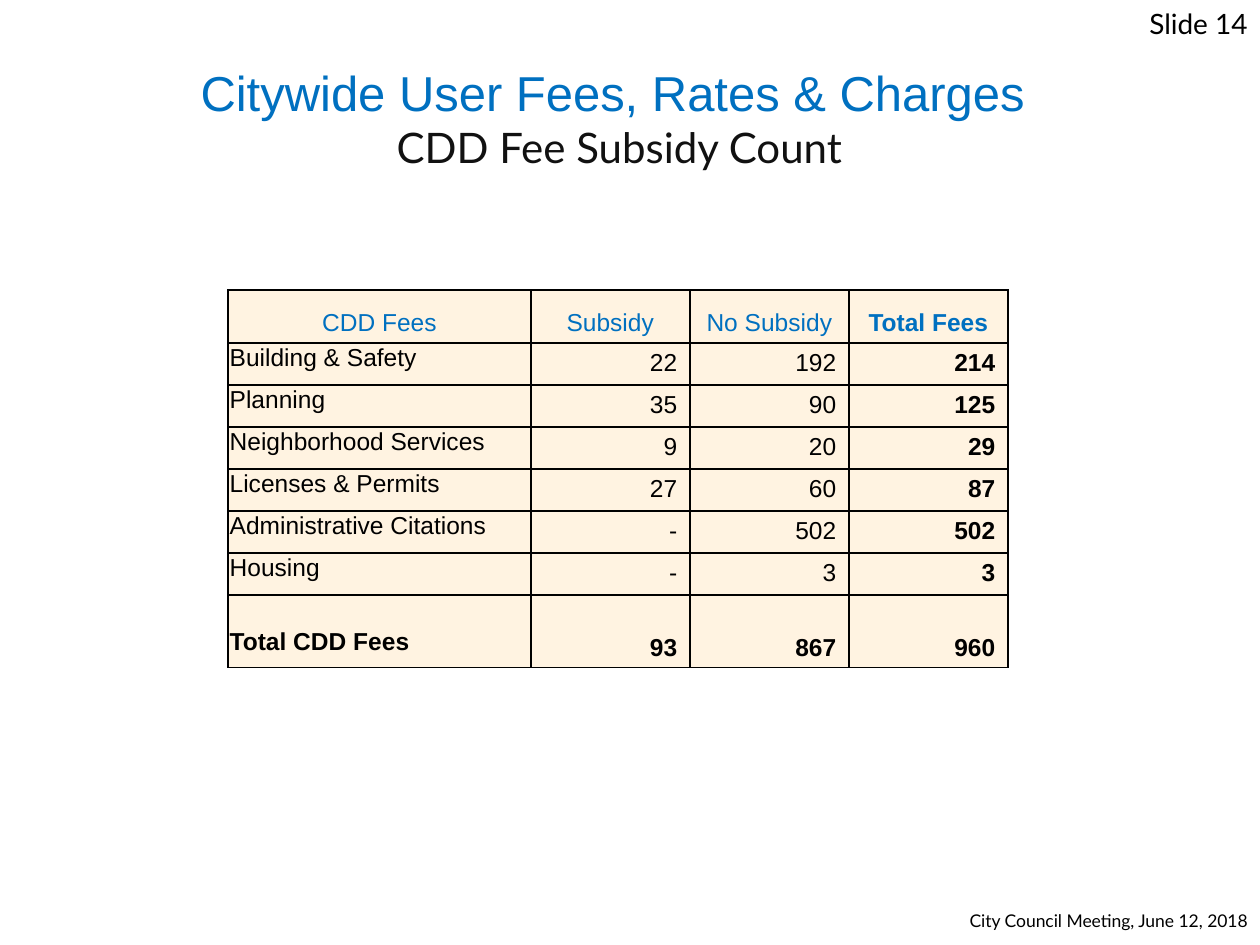
import pptx
import pptx.dml.color
import pptx.enum.text
import pptx.oxml
import pptx.oxml.ns
import pptx.util

Cm = pptx.util.Cm
ALIGN = pptx.enum.text.PP_ALIGN
ANCHOR = pptx.enum.text.MSO_ANCHOR

BLUE = "0070C0"
BLACK = "000000"
CREAM = "FFF3E1"

FEES = [
    ("CDD Fees", "Subsidy", "No Subsidy", "Total Fees"),
    ("Building & Safety", "22", "192", "214"),
    ("Planning", "35", "90", "125"),
    ("Neighborhood Services", "9", "20", "29"),
    ("Licenses & Permits", "27", "60", "87"),
    ("Administrative Citations", "-", "502", "502"),
    ("Housing", "-", "3", "3"),
    ("Total CDD Fees", "93", "867", "960"),
]


def rgb(value):
    """Return the colour for a hex string."""
    return pptx.dml.color.RGBColor.from_string(value)


def write(paragraph, text, size=14, font="Arial", color=BLACK, bold=False, align=ALIGN.LEFT):
    """Add one formatted run to a paragraph."""
    paragraph.alignment = align
    run = paragraph.add_run()
    run.text = text
    run.font.size = pptx.util.Pt(size)
    run.font.name = font
    run.font.bold = bold
    run.font.color.rgb = rgb(color)


def add_frame(slide, box, anchor=ANCHOR.TOP):
    """Add a wrapping text box and return its text frame."""
    frame = slide.shapes.add_textbox(*(Cm(length) for length in box)).text_frame
    frame.word_wrap = True
    frame.vertical_anchor = anchor
    return frame


def add_title(slide, box):
    """Place the two-line heading."""
    heading = add_frame(slide, box, ANCHOR.MIDDLE).paragraphs[0]
    write(heading, "Citywide User Fees, Rates & Charges ", size=28, color=BLUE, align=ALIGN.CENTER)
    heading.add_line_break()
    write(heading, "CDD Fee Subsidy Count", size=24, font="Lato", color="111111", align=ALIGN.CENTER)


def add_slide_number(slide, box):
    """Place the slide number at the top right."""
    write(add_frame(slide, box).paragraphs[0], "Slide 14", size=16, font="Lato", align=ALIGN.RIGHT)


def add_footer(slide, box):
    """Place the meeting name and date at the bottom right."""
    frame = add_frame(slide, box, ANCHOR.BOTTOM)
    frame.margin_bottom = Cm(0.29)
    write(frame.paragraphs[0], "City Council Meeting, June 12, 2018",
          size=10, font="Lato", align=ALIGN.RIGHT)


def outline(cell):
    """Draw a thin black border on every side of a cell."""
    properties = cell._tc.get_or_add_tcPr()
    for side in ("lnL", "lnR", "lnT", "lnB"):
        properties.append(pptx.oxml.parse_xml(
            f'<a:{side} {pptx.oxml.ns.nsdecls("a")} w="12700"><a:solidFill>'
            f'<a:srgbClr val="{BLACK}"/></a:solidFill></a:{side}>'))


def add_fee_table(slide, box):
    """Place the fee table, giving the label column and the total row extra room."""
    left, top, width, height = box
    last_row, last_column = len(FEES) - 1, len(FEES[0]) - 1
    table = slide.shapes.add_table(
        len(FEES), len(FEES[0]), Cm(left), Cm(top), Cm(width), Cm(height)).table
    table.first_row = table.horz_banding = False

    label_width, header_height, total_height = 6.1, 1.06, 1.46
    for index, column in enumerate(table.columns):
        column.width = Cm((width - label_width) / last_column if index else label_width)
    fee_height = (height - header_height - total_height) / (last_row - 1)
    heights = [header_height] + [fee_height] * (last_row - 1) + [total_height]

    for r, fees in enumerate(FEES):
        table.rows[r].height = Cm(heights[r])
        is_header, is_total = r == 0, r == last_row
        for c, value in enumerate(fees):
            cell = table.cell(r, c)
            outline(cell)
            cell.fill.solid()
            cell.fill.fore_color.rgb = rgb(CREAM)
            cell.vertical_anchor = ANCHOR.BOTTOM if is_header or is_total else ANCHOR.TOP
            align = ALIGN.CENTER if is_header else ALIGN.RIGHT
            if c == 0 and not is_header:
                align = ALIGN.LEFT
                cell.margin_left = cell.margin_right = cell.margin_top = Cm(0.03)
                cell.margin_bottom = Cm(0.24 if is_total else 0)
            write(cell.text_frame.paragraphs[0], value, align=align,
                  color=BLUE if is_header else BLACK, bold=is_total or c == last_column)


def main():
    """Build and save the slide."""
    presentation = pptx.Presentation()
    presentation.slide_width, presentation.slide_height = Cm(25.4), Cm(19.05)
    slide = presentation.slides.add_slide(presentation.slide_layouts[6])
    add_title(slide, (1.9, 1.1, 21.17, 2.54))
    add_fee_table(slide, (4.6, 5.85, 15.72, 7.4))
    add_slide_number(slide, (19.48, 0, 5.92, 1.27))
    add_footer(slide, (17.35, 17.78, 8.05, 1.27))
    presentation.save("out.pptx")


if __name__ == "__main__":
    main()
